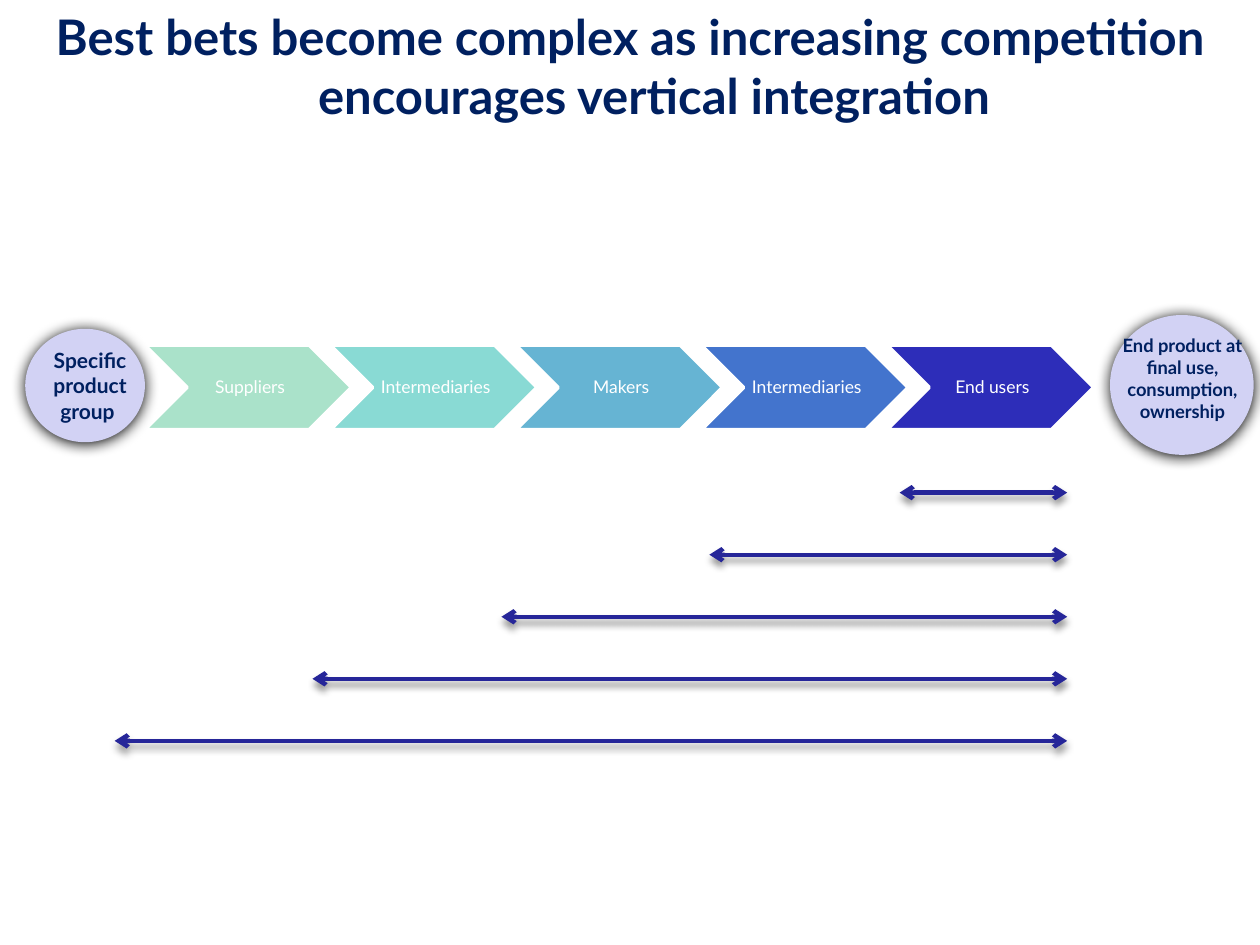
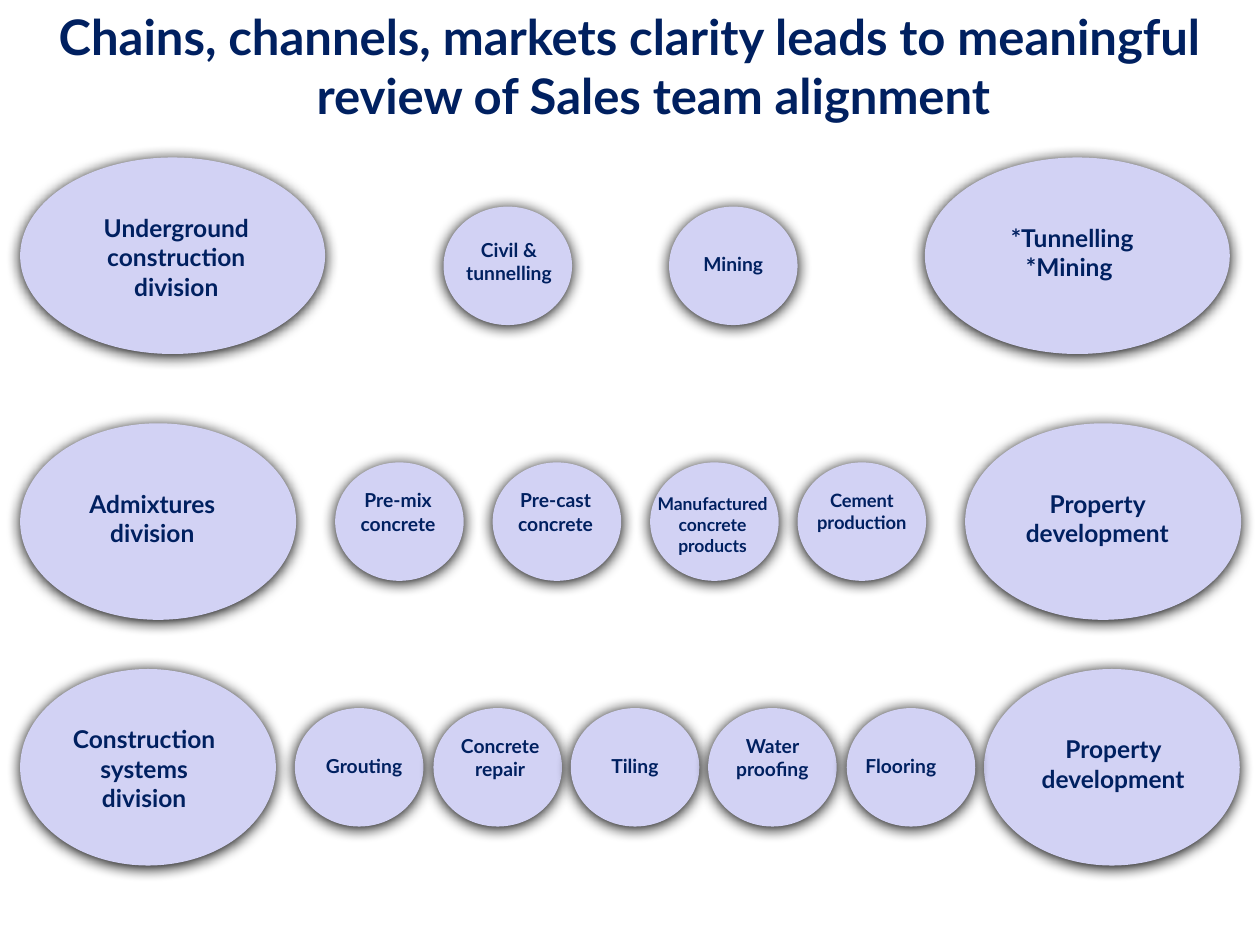
from lxml import etree
from pptx import Presentation
from pptx.dml.color import RGBColor
from pptx.enum.shapes import MSO_CONNECTOR, MSO_SHAPE
from pptx.enum.text import MSO_ANCHOR, MSO_AUTO_SIZE, PP_ALIGN
from pptx.oxml.ns import qn
from pptx.util import Inches, Pt

OVAL, CHEVRON = MSO_SHAPE.OVAL, MSO_SHAPE.CHEVRON
STRAIGHT = MSO_CONNECTOR.STRAIGHT
TOP, MIDDLE = MSO_ANCHOR.TOP, MSO_ANCHOR.MIDDLE
NO_FIT, GROW = MSO_AUTO_SIZE.NONE, MSO_AUTO_SIZE.SHAPE_TO_FIT_TEXT
CENTER = PP_ALIGN.CENTER

FONT = "Lato"
COLORS = {
    "navy": "002060", "white": "FFFFFF", "lilac": "D2D2F4",
    "arrow": "262699", "shadow": "000000",
}
TITLE_ONLY = 5


def write(frame, text, size, color="navy", bold=True):
    """Fill a text frame with centred paragraphs, one per line of text."""
    frame.word_wrap = True
    for number, line in enumerate(text.split("\n")):
        para = frame.paragraphs[0] if number == 0 else frame.add_paragraph()
        para.alignment = CENTER
        span = para.add_run()
        span.text = line
        span.font.name = FONT
        span.font.size = Pt(size)
        span.font.bold = bold
        span.font.color.rgb = RGBColor.from_string(COLORS[color])


def add_shadow(shape, opacity, blur, distance):
    """Give a shape or connector a soft shadow that falls straight down."""
    effects = etree.SubElement(shape._element.spPr, qn("a:effectLst"))
    outer = etree.SubElement(
        effects, qn("a:outerShdw"), blurRad=str(Pt(blur)),
        dist=str(Pt(distance)), dir="5400000", algn="ctr", rotWithShape="0")
    tint = etree.SubElement(outer, qn("a:srgbClr"), val=COLORS["shadow"])
    etree.SubElement(tint, qn("a:alpha"), val=str(opacity * 1000))


deck = Presentation()
deck.slide_width, deck.slide_height = Inches(10), Inches(7.5)

# Titles: text, left, width
titles = [
    ("Best bets become complex as increasing competition "
     "encourages vertical integration", 0, 10),
    ("Chains, channels, markets clarity leads to meaningful "
     "review of Sales team alignment", 0.19, 9.61),
]
pages = []
for text, left, width in titles:
    page = deck.slides.add_slide(deck.slide_layouts[TITLE_ONLY])
    title = page.shapes.title
    title.left, title.top = Inches(left), Inches(0)
    title.width, title.height = Inches(width), Inches(1.07)
    write(title.text_frame, text, 28)
    title.text_frame.vertical_anchor = TOP
    title.text_frame.auto_size = NO_FIT
    hanging = title.text_frame.paragraphs[0]._p.get_or_add_pPr()
    hanging.set("marL", str(Inches(0.38)))
    hanging.set("indent", str(-Inches(0.38)))
    pages.append(page)
chain_page, alignment_page = pages

# Value chain: equal chevrons with their labels
stages = [
    ("Suppliers", "AAE2CA"), ("Intermediaries", "89DAD4"),
    ("Makers", "66B4D3"), ("Intermediaries", "4374CD"),
    ("End users", "2D2DB9"),
]
chain = chain_page.shapes.add_group_shape()
for number, (label, fill) in enumerate(stages):
    left = 1.15 + number * 5.89 / 4
    chevron = chain.shapes.add_shape(
        CHEVRON, Inches(left), Inches(2.74), Inches(1.64), Inches(0.67))
    chevron.shadow.inherit = False
    chevron.fill.solid()
    chevron.fill.fore_color.rgb = RGBColor.from_string(fill)
    chevron.line.color.rgb = RGBColor.from_string(COLORS["white"])
    chevron.line.width = Pt(2)
    box = chain.shapes.add_textbox(
        Inches(left + 0.33), Inches(2.74), Inches(0.98), Inches(0.67))
    frame = box.text_frame
    write(frame, label, 10, "white", bold=False)
    frame.vertical_anchor = MIDDLE
    frame.margin_left = Inches(0.04)
    frame.margin_top = frame.margin_right = frame.margin_bottom = Inches(0.01)
    frame.paragraphs[0].line_spacing = 0.9

# Reach of integration: one arrow more per step back along the chain
for number, start in enumerate([7.14, 5.63, 3.98, 2.48, 0.91]):
    height = Inches(3.91 + number * 1.97 / 4)
    arrow = chain_page.shapes.add_connector(
        STRAIGHT, Inches(start), height, Inches(8.47), height)
    arrow.line.color.rgb = RGBColor.from_string(COLORS["arrow"])
    arrow.line.width = Pt(2.5)
    for end in ("a:headEnd", "a:tailEnd"):
        etree.SubElement(arrow.line._ln, qn(end), type="arrow")
    add_shadow(arrow, 40, 4, 3)

# Ovals: page, oval place, label, size, label place
ovals = [
    (chain_page, (8.81, 2.5, 1.14, 1.11),
     "End product at final use, consumption, ownership", 10.5,
     (8.77, 2.6, 1.23, 0.98)),
    (chain_page, (0.2, 2.61, 0.95, 0.9), "Specific product group ", 12,
     (0.2, 2.71, 1.03, 0.91)),
]

# Divisions and end markets: left, top, width, label, label place
large_ovals = [
    (0.16, 1.25, 2.42, "Underground construction\ndivision", (0.37, 1.64, 2.06, 1.01)),
    (0.16, 3.36, 2.19, "Admixtures\ndivision", (0.28, 3.83, 1.86, 0.77)),
    (0.16, 5.31, 2.03, "Construction\nsystems\ndivision", (0.28, 5.7, 1.73, 1.01)),
    (7.34, 1.25, 2.42, "*Tunnelling\n*Mining ", (7.34, 1.72, 2.34, 0.77)),
    (7.66, 3.36, 2.19, "Property development", (7.78, 3.83, 1.86, 0.77)),
    (7.81, 5.31, 2.03, "Property development", (7.97, 5.78, 1.73, 0.77)),
]
for left, top, width, label, place in large_ovals:
    ovals.append((alignment_page, (left, top, width, 1.56), label, 14, place))

# Channels: top of the row, then left, label, size, label place
channel_rows = [
    (1.64, [
        (3.52, "Civil & tunnelling", 11, (3.53, 1.84, 1.02, 0.47)),
        (5.31, "Mining", 11, (5.39, 1.95, 0.86, 0.29)),
    ]),
    (3.67, [
        (2.66, "Pre-mix concrete", 11, (2.73, 3.83, 0.86, 0.47)),
        (3.91, "Pre-cast concrete", 11, (3.98, 3.83, 0.86, 0.47)),
        (5.16, "Manufactured concrete products", 10, (5.03, 3.86, 1.25, 0.77)),
        (6.33, "Cement production", 10.5, (6.33, 3.83, 1.02, 0.45)),
    ]),
    (5.62, [
        (2.34, "Grouting", 11, (2.42, 5.94, 0.94, 0.29)),
        (3.44, "Concrete repair", 11, (3.52, 5.78, 0.9, 0.47)),
        (4.53, "Tiling", 11, (4.61, 5.94, 0.86, 0.29)),
        (5.62, "Water proofing", 11, (5.7, 5.78, 0.86, 0.47)),
        (6.72, "Flooring", 11, (6.72, 5.94, 0.86, 0.29)),
    ]),
]
for top, channels in channel_rows:
    for left, label, size, place in channels:
        ovals.append((alignment_page, (left, top, 1.02, 0.94), label, size, place))

# Draw every oval grouped with its label
for page, oval_place, label, size, label_place in ovals:
    group = page.shapes.add_group_shape()
    oval = group.shapes.add_shape(OVAL, *map(Inches, oval_place))
    oval.fill.solid()
    oval.fill.fore_color.rgb = RGBColor.from_string(COLORS["lilac"])
    oval.line.fill.background()
    add_shadow(oval, 100, 8.5, 1)
    box = group.shapes.add_textbox(*map(Inches, label_place))
    write(box.text_frame, label, size)
    box.text_frame.auto_size = GROW

deck.save("out.pptx")
